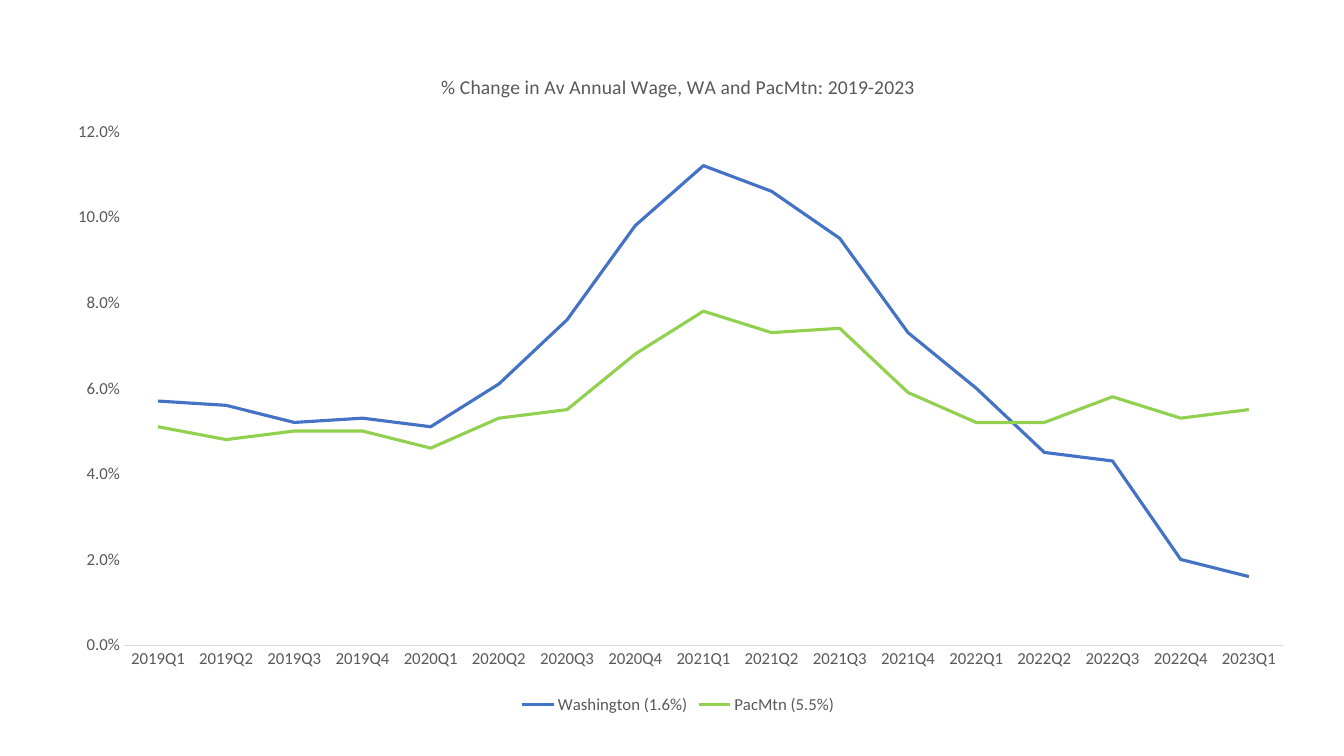
import pptx
import pptx.chart.data
import pptx.dml.color
import pptx.enum.chart
import pptx.oxml
import pptx.oxml.ns
import pptx.util

Pt = pptx.util.Pt
Color = pptx.dml.color.RGBColor.from_string
chart_enum = pptx.enum.chart

# Content: quarterly wage change in percent
TITLE = "% Change in Av Annual Wage, WA and PacMtn: 2019-2023"
FIRST_YEAR = 2019
WAGE_CHANGE = {
    "Washington (1.6%)": [5.7, 5.6, 5.2, 5.3, 5.1, 6.1, 7.6, 9.8, 11.2,
                          10.6, 9.5, 7.3, 6.0, 4.5, 4.3, 2.0, 1.6],
    "PacMtn (5.5%)": [5.1, 4.8, 5.0, 5.0, 4.6, 5.3, 5.5, 6.8, 7.8,
                      7.3, 7.4, 5.9, 5.2, 5.2, 5.8, 5.3, 5.5],
}

THEME = {
    "font": "Calibri",
    "text": "595959",
    "axis": "D9D9D9",
    "series": ["4472C4", "92D050"],
    "title_size": 14,
    "label_size": 12,
    "axis_width": 0.75,
    "series_width": 2.25,
}
SLIDE_SIZE = (960, 540)
CHART_BOX = (34.5, 36.7, 900, 476.6)
PLOT_FRACTIONS = {"x": 0.06, "y": 0.12, "w": 0.92, "h": 0.77}


def set_attributes(target, values):
    for name, value in values.items():
        setattr(target, name, value)


def format_font(font, size):
    set_attributes(font, {"name": THEME["font"], "size": Pt(size), "bold": False})
    font.color.rgb = Color(THEME["text"])


def place_plot(chart):
    """Fix the inner plot rectangle as fractions of the chart."""
    plot_area = chart.element.find(".//" + pptx.oxml.ns.qn("c:plotArea"))
    for layout in plot_area.findall(pptx.oxml.ns.qn("c:layout")):
        plot_area.remove(layout)
    modes = "".join(f'<c:{key}Mode val="edge"/>' for key in "xy")
    sizes = "".join(f'<c:{key} val="{value}"/>' for key, value in PLOT_FRACTIONS.items())
    plot_area.insert(0, pptx.oxml.parse_xml(
        f'<c:layout {pptx.oxml.ns.nsdecls("c")}><c:manualLayout>'
        f'<c:layoutTarget val="inner"/>{modes}{sizes}</c:manualLayout></c:layout>'))


def add_wage_chart(slide):
    # Data
    data = pptx.chart.data.CategoryChartData(number_format="0.0%")
    quarter_count = len(next(iter(WAGE_CHANGE.values())))
    data.categories = [f"{FIRST_YEAR + index // 4}Q{index % 4 + 1}"
                       for index in range(quarter_count)]
    for name, percents in WAGE_CHANGE.items():
        data.add_series(name, [round(percent / 100, 3) for percent in percents])
    chart = slide.shapes.add_chart(
        chart_enum.XL_CHART_TYPE.LINE, *map(Pt, CHART_BOX), data).chart
    format_font(chart.font, THEME["label_size"])

    # Title and legend
    chart.has_title = True
    chart.chart_title.include_in_layout = False
    title_frame = chart.chart_title.text_frame
    title_frame.text = TITLE
    format_font(title_frame.paragraphs[0].runs[0].font, THEME["title_size"])
    chart.has_legend = True
    set_attributes(chart.legend, {
        "position": chart_enum.XL_LEGEND_POSITION.BOTTOM, "include_in_layout": False})
    format_font(chart.legend.font, THEME["label_size"])

    # Axes
    for axis in (chart.category_axis, chart.value_axis):
        set_attributes(axis, {
            "major_tick_mark": chart_enum.XL_TICK_MARK.NONE,
            "minor_tick_mark": chart_enum.XL_TICK_MARK.NONE,
            "has_major_gridlines": False})
        format_font(axis.tick_labels.font, THEME["label_size"])
    category_line = chart.category_axis.format.line
    category_line.color.rgb = Color(THEME["axis"])
    category_line.width = Pt(THEME["axis_width"])
    chart.value_axis.format.line.fill.background()
    set_attributes(chart.value_axis, {
        "minimum_scale": 0, "maximum_scale": 0.12, "major_unit": 0.02})
    set_attributes(chart.value_axis.tick_labels, {
        "number_format": "#0.0%", "number_format_is_linked": False})

    # Lines
    plot = chart.plots[0]
    plot.vary_by_categories = False
    for series, color in zip(plot.series, THEME["series"]):
        series.smooth = False
        series.marker.style = chart_enum.XL_MARKER_STYLE.NONE
        series.format.line.color.rgb = Color(color)
        series.format.line.width = Pt(THEME["series_width"])
    place_plot(chart)


def main():
    presentation = pptx.Presentation()
    presentation.slide_width, presentation.slide_height = map(Pt, SLIDE_SIZE)
    slide = presentation.slides.add_slide(presentation.slide_layouts[6])
    add_wage_chart(slide)
    presentation.save("out.pptx")


if __name__ == "__main__":
    main()
